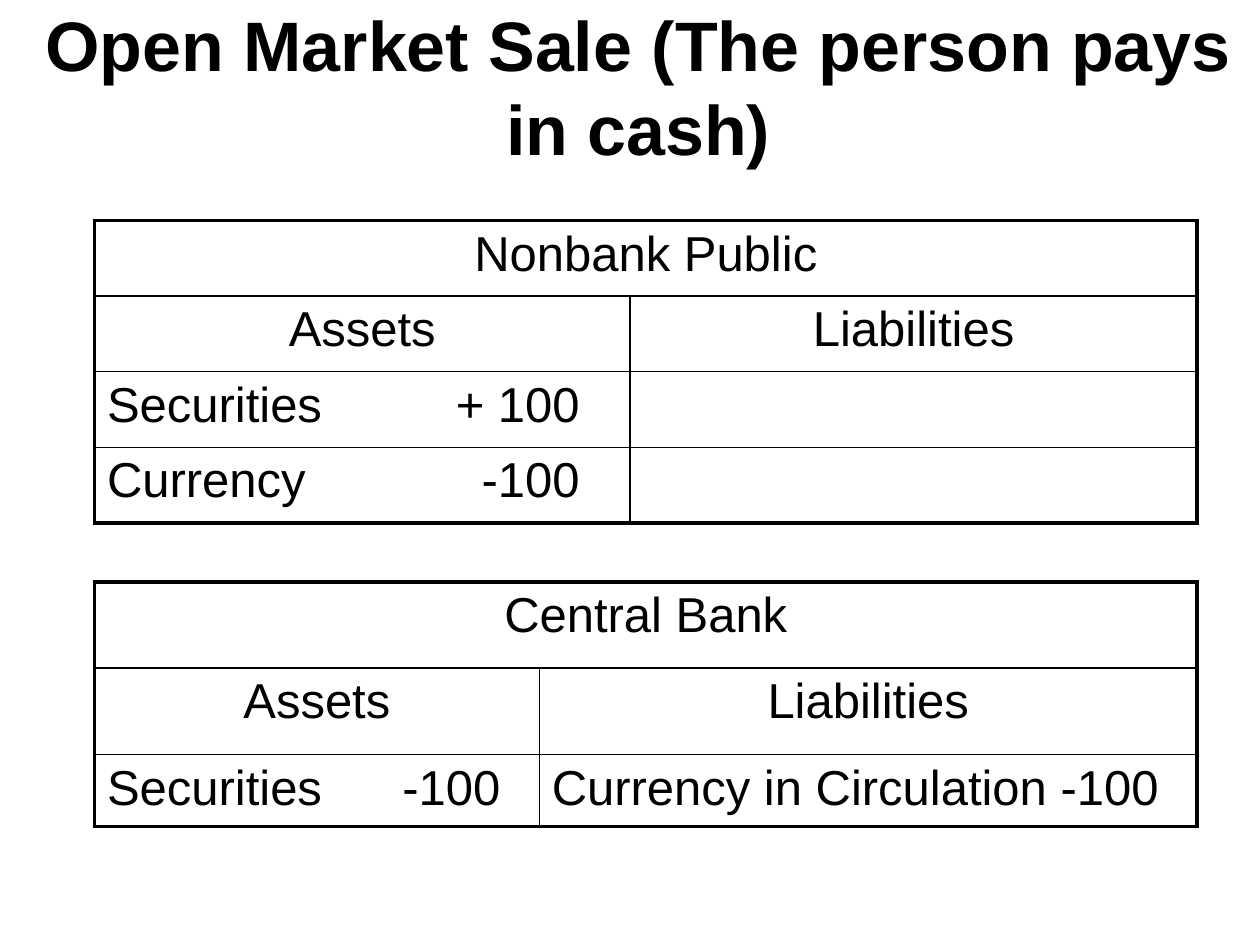
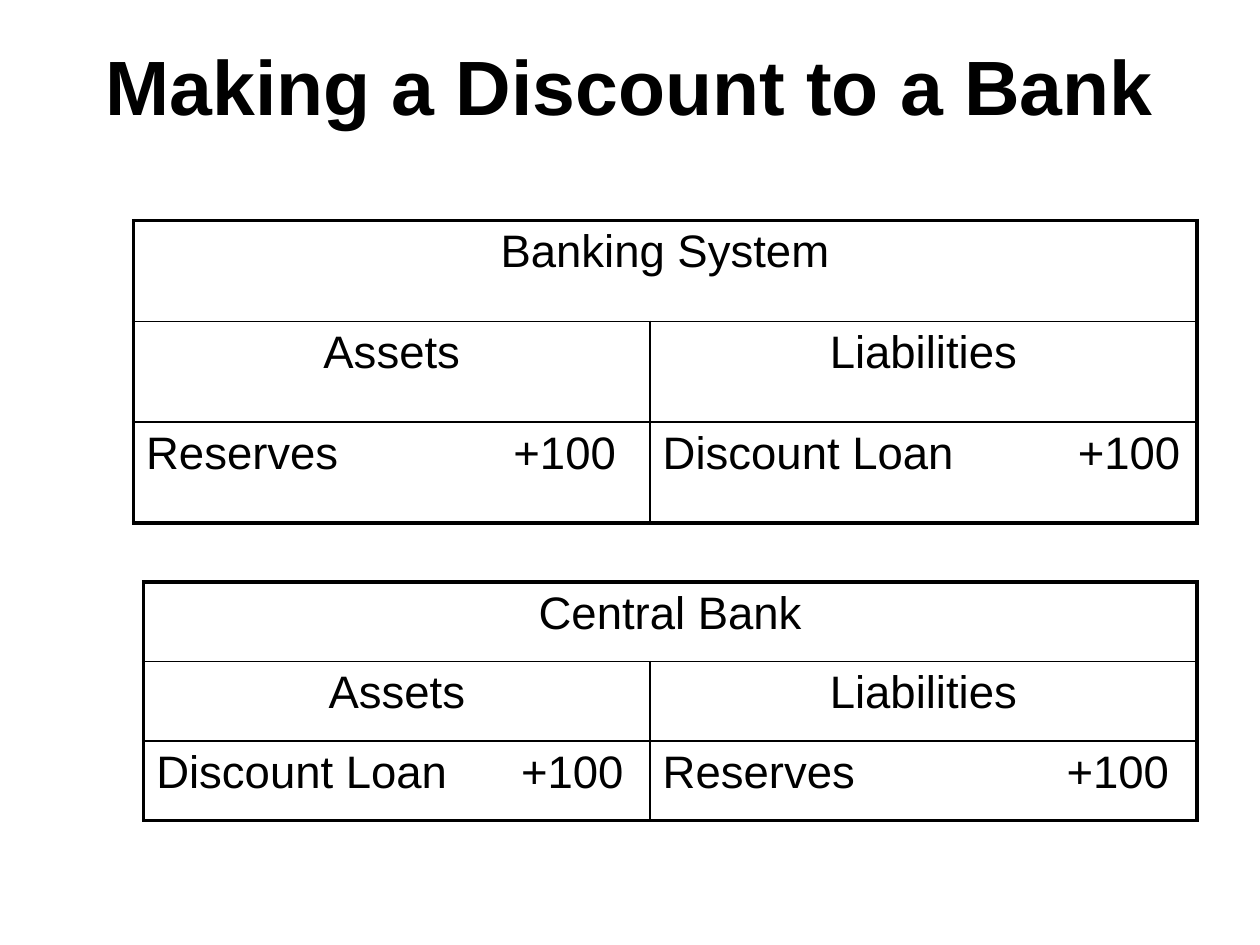
"""Build two slides of balance-sheet tables for central bank operations."""
from lxml import etree
from pptx import Presentation
from pptx.dml.color import RGBColor
from pptx.enum.text import MSO_ANCHOR, MSO_AUTO_SIZE, PP_ALIGN
from pptx.oxml.ns import qn
from pptx.util import Inches, Pt

CENTER, LEFT = PP_ALIGN.CENTER, PP_ALIGN.LEFT
MIDDLE = MSO_ANCHOR.MIDDLE
NO_AUTOFIT = MSO_AUTO_SIZE.NONE

COLORS = {"ink": "000000", "paper": "FFFFFF"}
OUTER_LINE, INNER_LINE = Pt(2.25), Pt(1)
TITLE_FRAME = {"vertical_anchor": MIDDLE, "word_wrap": True, "auto_size": NO_AUTOFIT}
SHEET_TOPS = [1.75, 4.62]
ACCOUNT_SIDES = ["Assets", "Liabilities"]

OPERATIONS = [
    {
        "title": "Open Market Sale (The person pays in cash)",
        "title_box": (0.2, 0.05, 9.73, 1.25),
        "title_size": 40,
        "entry_size": 28,
        "sheets": [
            {"holder": "Nonbank Public", "left": 0.75, "widths": [4.25, 4.5],
             "heights": [0.6] * 4, "amount_stops": [3.75, None],
             "entries": [["Securities\t+ 100", ""], ["Currency\t-100", ""]]},
            {"holder": "Central Bank", "left": 0.75, "widths": [3.53, 5.22],
             "heights": [0.68, 0.69, 0.57], "amount_stops": [3.12, None],
             "entries": [["Securities\t-100", "Currency in Circulation -100"]]},
        ],
    },
    {
        "title": "Making a Discount to a Bank",
        "title_box": (0.5, 0.05, 9, 1.25),
        "title_size": 44,
        "entry_size": 26,
        "sheets": [
            {"holder": "Banking System", "left": 1.06, "widths": [4.1, 4.34],
             "heights": [0.8] * 3, "amount_stops": [3.73, 4.11],
             "entries": [["Reserves\t+100", "Discount Loan\t+100"]]},
            {"holder": "Central Bank", "left": 1.14, "widths": [4.02, 4.34],
             "heights": [0.63] * 3, "amount_stops": [3.71, 4.02],
             "entries": [["Discount Loan\t+100", "Reserves\t+100"]]},
        ],
    },
]


def write(paragraph, text, size, bold, alignment):
    paragraph.alignment = alignment
    run = paragraph.add_run()
    run.text = text
    for name, value in {"name": "Arial", "size": Pt(size), "bold": bold}.items():
        setattr(run.font, name, value)
    run.font.color.rgb = RGBColor.from_string(COLORS["ink"])


def draw_borders(cell, widths):
    properties = cell._tc.get_or_add_tcPr()
    for side, width in widths.items():
        line = etree.SubElement(properties, qn(f"a:ln{side}"), w=str(width))
        fill = etree.SubElement(line, qn("a:solidFill"))
        etree.SubElement(fill, qn("a:srgbClr"), val=COLORS["ink"])


deck = Presentation()
deck.slide_width, deck.slide_height = Inches(10), Inches(7.5)
title_only = deck.slide_layouts.get_by_name("Title Only")

for operation in OPERATIONS:
    slide = deck.slides.add_slide(title_only)
    slide.background.fill.solid()
    slide.background.fill.fore_color.rgb = RGBColor.from_string(COLORS["paper"])

    title = slide.shapes.title
    for side, length in zip(("left", "top", "width", "height"), operation["title_box"]):
        setattr(title, side, Inches(length))
    for name, value in TITLE_FRAME.items():
        setattr(title.text_frame, name, value)
    write(title.text_frame.paragraphs[0], operation["title"],
          operation["title_size"], True, CENTER)

    for sheet, top in zip(operation["sheets"], SHEET_TOPS):
        rows = [[sheet["holder"], ""], ACCOUNT_SIDES, *sheet["entries"]]
        last_row = len(rows) - 1
        balance = slide.shapes.add_table(
            len(rows), 2, Inches(sheet["left"]), Inches(top),
            Inches(sum(sheet["widths"])), Inches(sum(sheet["heights"]))).table
        balance.first_row = balance.horz_banding = False
        for column, width in zip(balance.columns, sheet["widths"]):
            column.width = Inches(width)
        for row, height in zip(balance.rows, sheet["heights"]):
            row.height = Inches(height)
        balance.cell(0, 0).merge(balance.cell(0, 1))

        for r, texts in enumerate(rows):
            for c, text in enumerate(texts):
                cell = balance.cell(r, c)
                outer = {"L": c == 0 or r == 0, "R": c == 1 or r == 0,
                         "T": r == 0, "B": r == last_row}
                draw_borders(cell, {side: OUTER_LINE if edge else INNER_LINE
                                    for side, edge in outer.items()})
                cell.fill.background()
                if not text:
                    continue
                paragraph = cell.text_frame.paragraphs[0]
                if "\t" in text:
                    stops = etree.SubElement(
                        paragraph._p.get_or_add_pPr(), qn("a:tabLst"))
                    etree.SubElement(stops, qn("a:tab"), algn="r",
                                     pos=str(Inches(sheet["amount_stops"][c])))
                write(paragraph, text, operation["entry_size"], False,
                      CENTER if r < 2 else LEFT)

deck.save("out.pptx")
